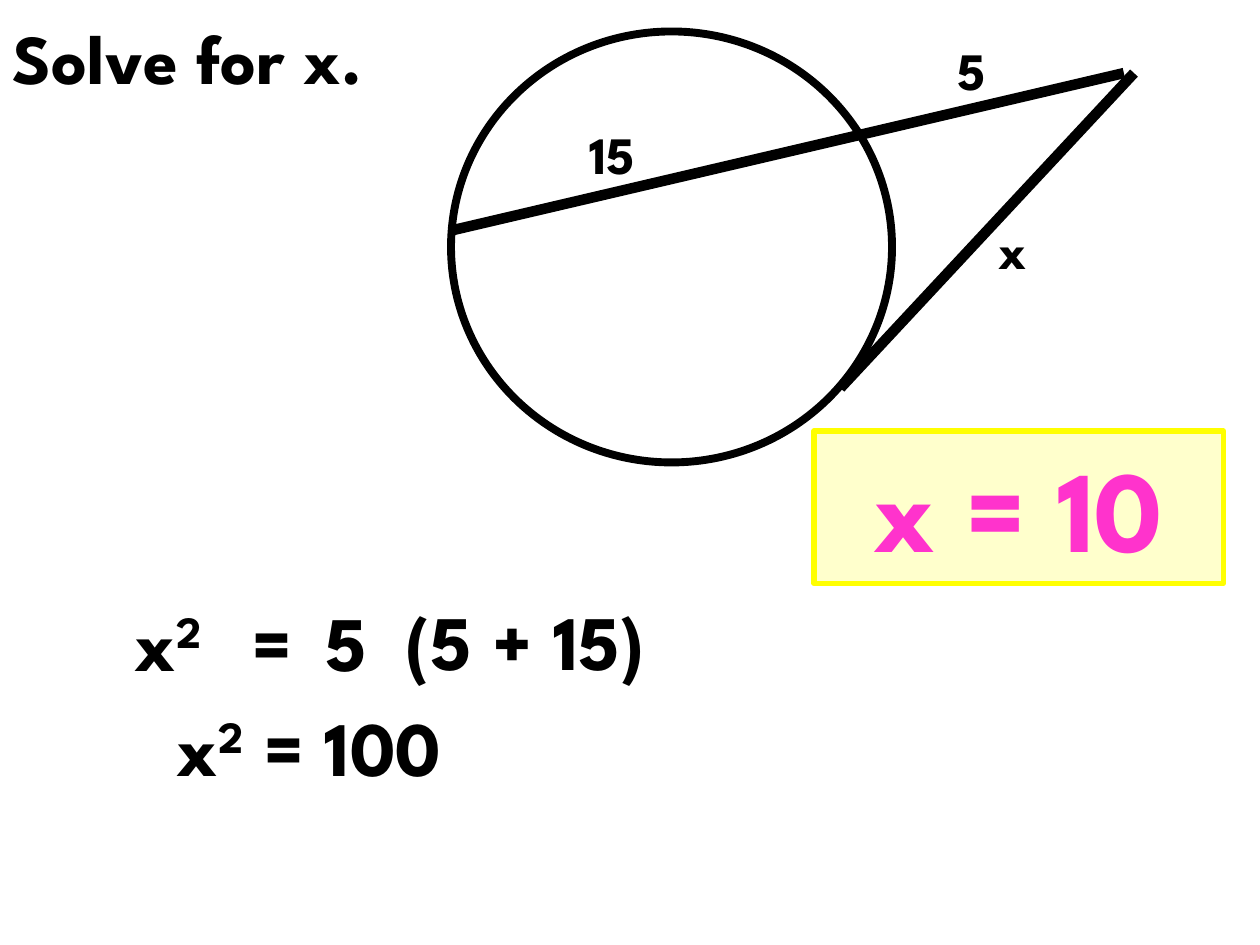
import pptx
import pptx.dml.color
import pptx.enum.shapes
import pptx.enum.text
import pptx.oxml.ns
import pptx.util
from lxml import etree

Inches = pptx.util.Inches

THEME = {
    "font": "League Spartan",
    "ink": "000000",
    "answer": "FF33CC",
    "answer_fill": "FFFFCC",
    "answer_line": "FFFF00",
    "title_size": 40,
    "label_size": 30,
    "equation_size": 44,
    "answer_size": 66,
}

TITLE = ("Solve for x.", (0, 0.06, 8.17, 0.77))
CIRCLE = (3.58, 0.25, 3.5, 3.42)
SEGMENTS = [
    ((9, 0.58), (6.67, 3.08)),
    ((8.92, 0.58), (3.58, 1.83)),
]
LABEL_SIZE = (1.17, 0.6)
LABELS = [("15", (4.58, 0.92)), ("5", (7.5, 0.25)), ("x", (7.83, 1.67))]
EQUATION_HEIGHT = 0.83
EQUATIONS = [
    (["x", ("2", 30)], 0.75, 4.67, 1.17),
    (["="], 1.58, 4.67, 1.17),
    (["5"], 2.25, 4.67, 1),
    (["(5 + 15)"], 2.92, 4.66, 2.5),
    (["x", ("2", 30), " = 100"], 0.58, 5.5, 3.75),
]
ANSWER = ("x = 10", (6.46, 3.42, 3.25, 1.21))


def color(name):
    return pptx.dml.color.RGBColor.from_string(THEME[name])


def lengths(values):
    return [Inches(value) for value in values]


def write_text(shape, pieces, size, ink="ink", centered=False,
               anchor="TOP", space_before=50):
    frame = shape.text_frame
    frame.word_wrap = True
    frame.auto_size = pptx.enum.text.MSO_AUTO_SIZE.SHAPE_TO_FIT_TEXT
    frame.vertical_anchor = getattr(pptx.enum.text.MSO_ANCHOR, anchor)
    paragraph = frame.paragraphs[0]
    alignments = pptx.enum.text.PP_ALIGN
    paragraph.alignment = alignments.CENTER if centered else alignments.LEFT
    if space_before:
        paragraph.space_before = pptx.util.Pt(0)
        spacing = paragraph._p.pPr.find(pptx.oxml.ns.qn("a:spcBef"))
        spacing.remove(spacing[0])
        percent = etree.SubElement(spacing, pptx.oxml.ns.qn("a:spcPct"))
        percent.set("val", str(space_before * 1000))
    for piece in pieces:
        text, baseline = (piece, 0) if isinstance(piece, str) else piece
        run = paragraph.add_run()
        run.text = text
        run.font.name = THEME["font"]
        run.font.size = pptx.util.Pt(THEME[size])
        run.font.bold = True
        run.font.color.rgb = color(ink)
        if baseline:
            run._r.get_or_add_rPr().set("baseline", str(baseline * 1000))


def add_outlined(slide, kind, box, line, width, fill=None):
    preset = getattr(pptx.enum.shapes.MSO_SHAPE, kind)
    shape = slide.shapes.add_shape(preset, *lengths(box))
    shape.shadow.inherit = False
    shape.line.color.rgb = color(line)
    shape.line.width = pptx.util.Pt(width)
    if fill:
        shape.fill.solid()
        shape.fill.fore_color.rgb = color(fill)
    else:
        shape.fill.background()
    return shape


def add_segment(slide, start, end):
    segment = slide.shapes.add_connector(
        pptx.enum.shapes.MSO_CONNECTOR.STRAIGHT, *lengths(start + end))
    segment.line.color.rgb = color("ink")
    segment.line.width = pptx.util.Pt(6)
    etree.SubElement(segment._element.spPr, pptx.oxml.ns.qn("a:effectLst"))


def main():
    presentation = pptx.Presentation()
    presentation.slide_width, presentation.slide_height = lengths((10, 7.5))
    slide = presentation.slides.add_slide(presentation.slide_layouts[5])

    text, box = TITLE
    title = slide.shapes.title
    title.left, title.top, title.width, title.height = lengths(box)
    write_text(title, [text], "title_size", anchor="BOTTOM", space_before=0)

    add_outlined(slide, "OVAL", CIRCLE, "ink", 4.5)
    for start, end in SEGMENTS:
        add_segment(slide, start, end)

    for text, position in LABELS:
        label = slide.shapes.add_textbox(*lengths(position + LABEL_SIZE))
        write_text(label, [text], "label_size")

    for pieces, left, top, width in EQUATIONS:
        equation = slide.shapes.add_textbox(
            *lengths((left, top, width, EQUATION_HEIGHT)))
        write_text(equation, pieces, "equation_size", centered=True)

    text, box = ANSWER
    answer = add_outlined(slide, "RECTANGLE", box, "answer_line", 3,
                          "answer_fill")
    write_text(answer, [text], "answer_size", ink="answer", centered=True)

    presentation.save("out.pptx")


if __name__ == "__main__":
    main()
